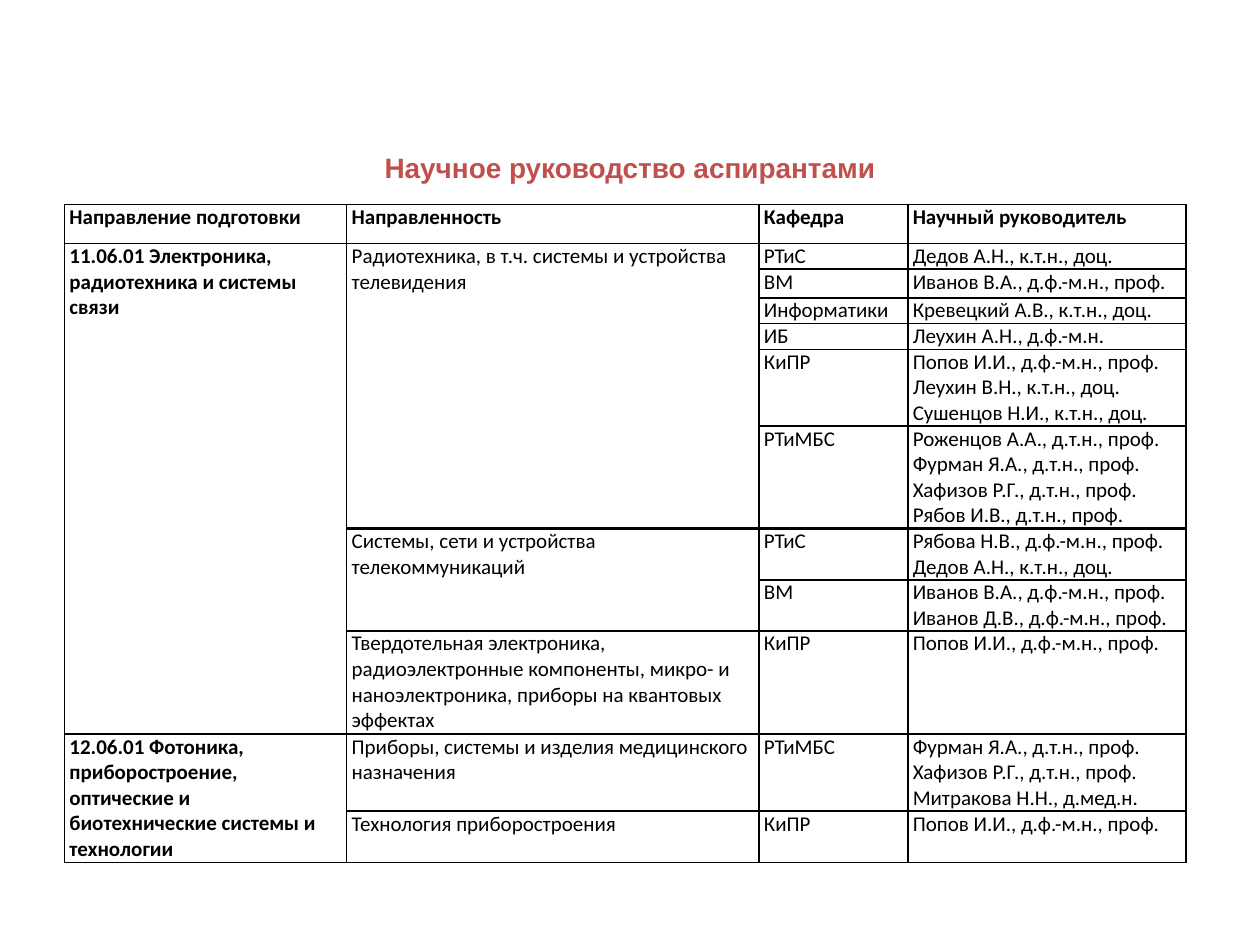
import dataclasses

import pptx
import pptx.dml.color
import pptx.enum.text
import pptx.oxml
import pptx.oxml.ns
import pptx.util
from pptx.util import Cm


@dataclasses.dataclass(frozen=True)
class Theme:
    """Colours, fonts and sizes of the slide."""
    accent: str = "C0504D"
    ink: str = "000000"
    title_font: str = "Arial"
    table_font: str = "Calibri"
    title_size: int = 16
    table_size: int = 12
    thin: float = 1
    heavy: float = 1.5


THEME = Theme()
HEADINGS = ["Направление подготовки", "Направленность", "Кафедра", "Научный руководитель"]
COLUMN_WIDTHS = [5.69, 8.31, 3, 5.61]
ROW_HEIGHTS = [0.79, 0.41, 0.58, 0.41, 0.41, 1.24, 1.68, 0.84, 0.91, 2.08, 1.24, 0.81]
PROGRAMMES = {
    "11.06.01 Электроника, радиотехника и системы связи": {
        "Радиотехника, в т.ч. системы и устройства телевидения": {
            "РТиС": ["Дедов А.Н., к.т.н., доц."],
            "ВМ": ["Иванов В.А., д.ф.-м.н., проф."],
            "Информатики": ["Кревецкий А.В., к.т.н., доц."],
            "ИБ": ["Леухин А.Н., д.ф.-м.н."],
            "КиПР": ["Попов И.И., д.ф.-м.н., проф.", "Леухин В.Н., к.т.н., доц.",
                     "Сушенцов Н.И., к.т.н., доц."],
            "РТиМБС": ["Роженцов А.А., д.т.н., проф.", "Фурман Я.А., д.т.н., проф.",
                       "Хафизов Р.Г., д.т.н., проф.", "Рябов И.В., д.т.н., проф."],
        },
        "Системы, сети и устройства телекоммуникаций": {
            "РТиС": ["Рябова Н.В., д.ф.-м.н., проф.", "Дедов А.Н., к.т.н., доц."],
            "ВМ": ["Иванов В.А., д.ф.-м.н., проф.", "Иванов Д.В., д.ф.-м.н., проф."],
        },
        "Твердотельная электроника, радиоэлектронные компоненты, микро- и "
        "наноэлектроника, приборы на квантовых эффектах": {
            "КиПР": ["Попов И.И., д.ф.-м.н., проф."],
        },
    },
    "12.06.01 Фотоника, приборостроение, оптические и биотехнические системы и технологии": {
        "Приборы, системы и изделия медицинского назначения": {
            "РТиМБС": ["Фурман Я.А., д.т.н., проф.", "Хафизов Р.Г., д.т.н., проф.",
                       "Митракова Н.Н., д.мед.н."],
        },
        "Технология приборостроения": {
            "КиПР": ["Попов И.И., д.ф.-м.н., проф."],
        },
    },
}


def format_text(frame, font_name, size, colour, bold):
    """Give every run of a text frame the same font."""
    for paragraph in frame.paragraphs:
        for run in paragraph.runs:
            run.font.name = font_name
            run.font.size = pptx.util.Pt(size)
            run.font.bold = bold
            run.font.color.rgb = pptx.dml.color.RGBColor.from_string(colour)


def write_cell(cell, text, bold=False):
    """Write one table cell."""
    cell.text_frame.text = text
    format_text(cell.text_frame, THEME.table_font, THEME.table_size, THEME.ink, bold)


def frame_cell(cell, top, bottom):
    """Set the margins, borders and empty fill of a cell."""
    cell.margin_left = cell.margin_right = Cm(0.1)
    cell.margin_top = cell.margin_bottom = 0
    properties = cell._tc.get_or_add_tcPr()
    widths = {"lnL": THEME.thin, "lnR": THEME.thin, "lnT": top, "lnB": bottom}
    for side, width in widths.items():
        properties.append(pptx.oxml.parse_xml(
            f'<a:{side} {pptx.oxml.ns.nsdecls("a")} w="{pptx.util.Pt(width)}">'
            f'<a:solidFill><a:srgbClr val="{THEME.ink}"/></a:solidFill></a:{side}>'))
    cell.fill.background()


def add_title(slide, left, top, width, height):
    """Place the heading of the slide."""
    title = slide.shapes.title
    title.left, title.top, title.width, title.height = left, top, width, height
    frame = title.text_frame
    frame.text = "Научное руководство аспирантами"
    frame.auto_size = pptx.enum.text.MSO_AUTO_SIZE.NONE
    frame.vertical_anchor = pptx.enum.text.MSO_ANCHOR.MIDDLE
    frame.paragraphs[0].alignment = pptx.enum.text.PP_ALIGN.CENTER
    frame.paragraphs[0].line_spacing = 1.15
    format_text(frame, THEME.title_font, THEME.title_size, THEME.accent, True)


def fill_programmes(table):
    """Write the programmes and return the rows where profiles start."""
    profile_starts = []
    row = 1
    for programme, profiles in PROGRAMMES.items():
        programme_start = row
        for profile, departments in profiles.items():
            profile_start = row
            profile_starts.append(row)
            for department, supervisors in departments.items():
                write_cell(table.cell(row, 2), department)
                write_cell(table.cell(row, 3), "\n".join(supervisors))
                row += 1
            write_cell(table.cell(profile_start, 1), profile)
            if row - profile_start > 1:
                table.cell(profile_start, 1).merge(table.cell(row - 1, 1))
        write_cell(table.cell(programme_start, 0), programme, bold=True)
        table.cell(programme_start, 0).merge(table.cell(row - 1, 0))
    return profile_starts


def add_supervision_table(slide, left, top, width, height):
    """Place the table of programmes, departments and supervisors."""
    table = slide.shapes.add_table(
        len(ROW_HEIGHTS), len(HEADINGS), left, top, width, height).table
    table.first_row = table.horz_banding = False
    for column, column_width in zip(table.columns, COLUMN_WIDTHS):
        column.width = Cm(column_width)
    for table_row, row_height in zip(table.rows, ROW_HEIGHTS):
        table_row.height = Cm(row_height)
    for column, heading in enumerate(HEADINGS):
        write_cell(table.cell(0, column), heading, bold=True)
    heavy_rows = fill_programmes(table)[1:]
    for row in range(len(ROW_HEIGHTS)):
        for column in range(len(HEADINGS)):
            cell = table.cell(row, column)
            next_row = row + (cell.span_height if cell.is_merge_origin else 1)
            top_width, bottom_width = (
                THEME.heavy if edge in heavy_rows else THEME.thin for edge in (row, next_row))
            frame_cell(cell, top_width, bottom_width)


def main():
    """Build and save the slide."""
    presentation = pptx.Presentation()
    presentation.slide_width, presentation.slide_height = Cm(25.4), Cm(19.05)
    slide = presentation.slides.add_slide(presentation.slide_layouts[5])
    add_supervision_table(slide, Cm(1.3), Cm(4.12), Cm(sum(COLUMN_WIDTHS)), Cm(sum(ROW_HEIGHTS)))
    add_title(slide, 0, Cm(2.92), presentation.slide_width, Cm(0.79))
    presentation.save("out.pptx")


if __name__ == "__main__":
    main()
